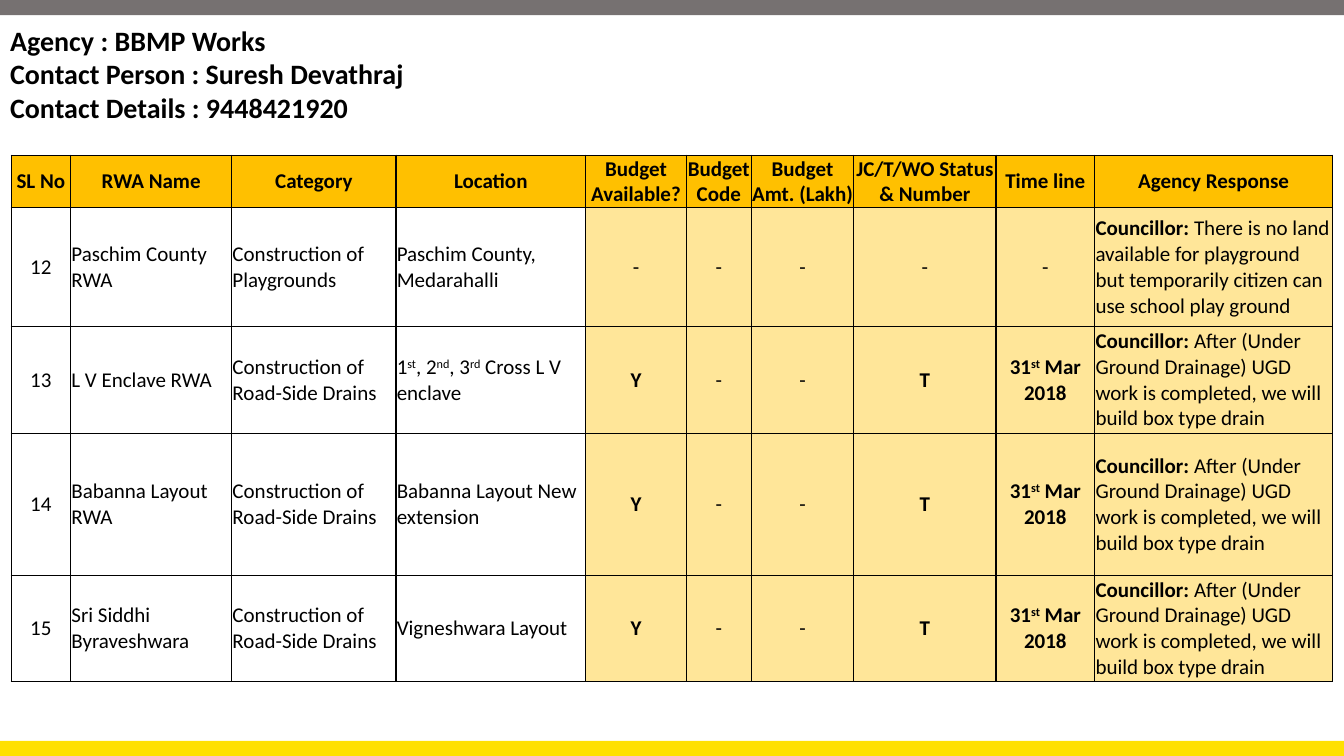
from dataclasses import dataclass

from lxml import etree
from pptx import Presentation
from pptx.dml.color import RGBColor
from pptx.enum.shapes import MSO_SHAPE
from pptx.enum.text import MSO_ANCHOR, MSO_AUTO_SIZE, PP_ALIGN
from pptx.oxml.ns import qn
from pptx.util import Cm, Pt

RECTANGLE = MSO_SHAPE.RECTANGLE
MIDDLE, TOP = MSO_ANCHOR.MIDDLE, MSO_ANCHOR.TOP
LEFT, CENTER = PP_ALIGN.LEFT, PP_ALIGN.CENTER
NO_AUTOFIT = MSO_AUTO_SIZE.NONE
TITLE_ONLY = 5


@dataclass(frozen=True)
class Theme:
    """Hold the colours, font and type sizes of the slide."""
    font: str = "Calibri"
    ink: RGBColor = RGBColor(0, 0, 0)
    top_bar: RGBColor = RGBColor(0x76, 0x71, 0x71)
    bottom_bar: RGBColor = RGBColor(0xFF, 0xE0, 0x00)
    header: RGBColor = RGBColor(0xFF, 0xC0, 0x00)
    response: RGBColor = RGBColor(0xFF, 0xE6, 0x99)
    title_size: Pt = Pt(20)
    table_size: Pt = Pt(15)
    border: Pt = Pt(1)


THEME = Theme()
PAGE_WIDTH, PAGE_HEIGHT = Cm(33.87), Cm(19.05)
BAR_HEIGHT = Cm(0.38)
CELL_MARGIN = Cm(0.02)

CONTACT = [
    "Agency : BBMP Works",
    "Contact Person : Suresh Devathraj",
    "Contact Details : 9448421920",
]
HEADINGS = [
    "SL No", "RWA Name", "Category", "Location", "Budget Available?",
    "Budget Code", "Budget Amt. (Lakh)", "JC/T/WO Status & Number",
    "Time line", "Agency Response",
]
COLUMN_WIDTHS = [1.5, 4.06, 4.14, 4.78, 2.54, 1.63, 2.59, 3.58, 2.49, 5.99]
ROW_HEIGHTS = [1.22, 3, 2.69, 3.58, 2.67]
FIRST_STATUS, LAST_COLUMN = 4, len(HEADINGS) - 1
LEFT_COLUMNS = (1, 2, 3, LAST_COLUMN)

DRAINS = "Construction of Road-Side Drains"
DRAIN_STATUS = [
    "Y", "-", "-", "T", "31^st^ Mar 2018",
    "After (Under Ground Drainage) UGD work is completed, "
    "we will build box type drain",
]
WORKS = [
    ["12", "Paschim County RWA", "Construction of Playgrounds",
     "Paschim County, Medarahalli", *"-----",
     "There is no land available for playground but temporarily "
     "citizen can use school play ground"],
    ["13", "L V Enclave RWA", DRAINS,
     "1^st^, 2^nd^, 3^rd^ Cross L V enclave", *DRAIN_STATUS],
    ["14", "Babanna Layout RWA", DRAINS,
     "Babanna Layout New extension", *DRAIN_STATUS],
    ["15", "Sri Siddhi Byraveshwara", DRAINS,
     "Vigneshwara Layout", *DRAIN_STATUS],
]


def style(para, size, bold, align):
    """Set the font and alignment of a paragraph."""
    para.alignment = align
    para.font.name = THEME.font
    para.font.size = size
    para.font.bold = bold
    para.font.color.rgb = THEME.ink


def add_bar(page, left, top, width, height, color):
    """Draw a plain coloured band."""
    bar = page.shapes.add_shape(RECTANGLE, left, top, width, height)
    bar.shadow.inherit = False
    bar.fill.solid()
    bar.fill.fore_color.rgb = color
    bar.line.fill.background()


def add_contact(page, left, top, width, height):
    """Place the agency contact lines in the title placeholder."""
    box = page.shapes.title
    box.left, box.top, box.width, box.height = left, top, width, height
    frame = box.text_frame
    frame.word_wrap = True
    frame.auto_size = NO_AUTOFIT
    frame.vertical_anchor = TOP
    frame.text = "\n".join(CONTACT)
    for para in frame.paragraphs:
        style(para, THEME.title_size, True, LEFT)


def add_borders(cell):
    """Rule all four sides of a cell."""
    properties = cell._tc.get_or_add_tcPr()
    for side in ("a:lnL", "a:lnR", "a:lnT", "a:lnB"):
        line = etree.SubElement(properties, qn(side), w=str(THEME.border))
        fill = etree.SubElement(line, qn("a:solidFill"))
        etree.SubElement(fill, qn("a:srgbClr"), val=str(THEME.ink))


def add_spans(para, text):
    """Add text to a paragraph, raising the parts between carets."""
    for index, part in enumerate(text.split("^")):
        span = para.add_run()
        span.text = part
        if index % 2:
            span.font._element.set("baseline", "30000")


def fill_cell(cell, text, row, column):
    """Write and format one cell according to its row and column."""
    is_header = row == 0
    is_status = FIRST_STATUS <= column < LAST_COLUMN
    add_borders(cell)
    if is_header or column >= FIRST_STATUS:
        cell.fill.solid()
        cell.fill.fore_color.rgb = THEME.header if is_header else THEME.response
    else:
        cell.fill.background()
    cell.margin_left = cell.margin_right = cell.margin_top = CELL_MARGIN
    cell.margin_bottom = 0
    cell.vertical_anchor = MIDDLE
    para = cell.text_frame.paragraphs[0]
    if column == LAST_COLUMN and not is_header:
        lead = para.add_run()
        lead.text = "Councillor: "
        lead.font.bold = True
    add_spans(para, text)
    bold = is_header or (is_status and text != "-")
    align = LEFT if column in LEFT_COLUMNS and not is_header else CENTER
    style(para, THEME.table_size, bold, align)


def add_works_table(page, left, top, width, height):
    """Build the table of works and agency responses."""
    rows = [HEADINGS, *WORKS]
    table = page.shapes.add_table(
        len(rows), len(HEADINGS), left, top, width, height).table
    table.horz_banding = False
    for column, size in zip(table.columns, COLUMN_WIDTHS):
        column.width = Cm(size)
    for row, size in zip(table.rows, ROW_HEIGHTS):
        row.height = Cm(size)
    for row, texts in enumerate(rows):
        for column, text in enumerate(texts):
            fill_cell(table.cell(row, column), text, row, column)


def main():
    """Build and save the slide."""
    deck = Presentation()
    deck.slide_width, deck.slide_height = PAGE_WIDTH, PAGE_HEIGHT
    page = deck.slides.add_slide(deck.slide_layouts[TITLE_ONLY])
    add_bar(page, 0, PAGE_HEIGHT - BAR_HEIGHT, PAGE_WIDTH, BAR_HEIGHT,
            THEME.bottom_bar)
    add_bar(page, 0, 0, PAGE_WIDTH, BAR_HEIGHT, THEME.top_bar)
    add_works_table(page, Cm(0.28), Cm(3.91),
                    Cm(sum(COLUMN_WIDTHS)), Cm(sum(ROW_HEIGHTS)))
    add_contact(page, 0, Cm(0.46), PAGE_WIDTH, Cm(2.82))
    deck.save("out.pptx")


if __name__ == "__main__":
    main()
